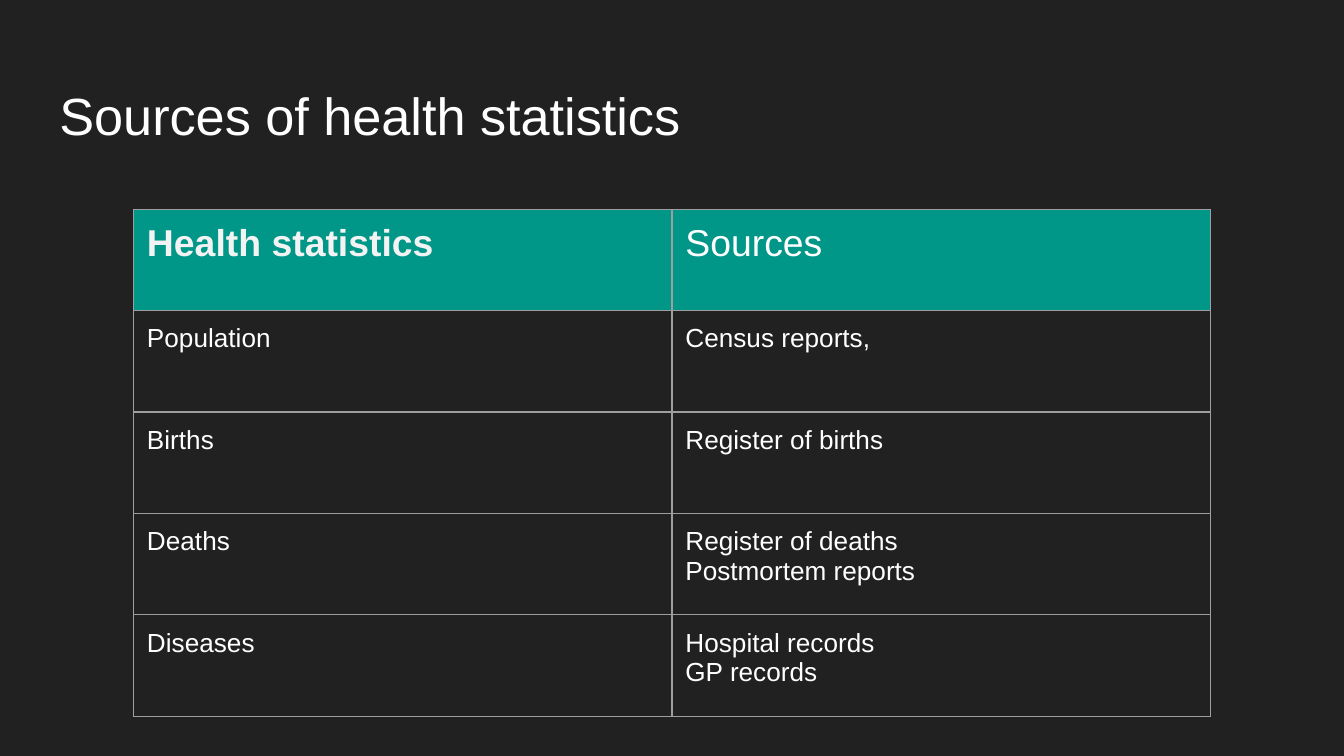
from collections import namedtuple

from lxml import etree
from pptx import Presentation
from pptx.dml.color import RGBColor
from pptx.enum import text
from pptx.oxml import ns

PX = 5715  # EMU per px: 160 px to the inch

Theme = namedtuple("Theme", "font back ink head_ink head line big mid small pad rule")
THEME = Theme("Arial", "212121", "FFFFFF", "F3F3F3", "009688", "9E9E9E",
              28, 20, 14, 16, 0.75)

TITLE = "Sources of health statistics"
ROWS = [
    ("Health statistics", "Sources"),
    ("Population", "Census reports,"),
    ("Births", "Register of births"),
    ("Deaths", "Register of deaths\nPostmortem reports"),
    ("Diseases", "Hospital records\nGP records"),
]


def scale(*box):
    return [n * PX for n in box]


def style(frame, size, ink, bold=False):
    for para in frame.paragraphs:
        for run in para.runs:
            font = run.font
            font.name, font.size, font.bold = THEME.font, size * 12700, bold
            font.color.rgb = RGBColor.from_string(ink)


def pad(part, top=THEME.pad):
    part.margin_left = part.margin_right = part.margin_bottom = THEME.pad * PX
    part.margin_top = top * PX


def edge(cell):
    """Draw the four borders, which must come before the fill."""
    props = cell._tc.get_or_add_tcPr()
    for spot, side in enumerate(("lnL", "lnR", "lnT", "lnB")):
        line = etree.Element(ns.qn(f"a:{side}"), w=str(int(THEME.rule * 12700)))
        fill = etree.SubElement(line, ns.qn("a:solidFill"))
        etree.SubElement(fill, ns.qn("a:srgbClr"), val=THEME.line)
        props.insert(spot, line)


def title(slide, x, y, w, h):
    box = slide.shapes.add_textbox(*scale(x, y, w, h))
    frame = box.text_frame
    frame.word_wrap = True
    frame.vertical_anchor = text.MSO_ANCHOR.TOP
    pad(frame, top=21)
    frame.text = TITLE
    style(frame, THEME.big, THEME.ink)


def table(slide, x, y, w, h):
    grid = slide.shapes.add_table(len(ROWS), len(ROWS[0]), *scale(x, y, w, h)).table
    grid.horz_banding = False
    for r, row in enumerate(ROWS):
        for c, words in enumerate(row):
            cell = grid.cell(r, c)
            pad(cell)
            cell.text_frame.text = words
            # Header row is filled; its first cell is bold
            if r == 0:
                cell.fill.solid()
                cell.fill.fore_color.rgb = RGBColor.from_string(THEME.head)
            else:
                cell.fill.background()
            lead = r == 0 and c == 0
            style(cell.text_frame, THEME.small if r else THEME.mid,
                  THEME.head_ink if lead else THEME.ink, lead)
            edge(cell)


def main():
    deck = Presentation()
    deck.slide_width, deck.slide_height = scale(1600, 900)
    slide = deck.slides.add_slide(deck.slide_layouts[6])

    # Background
    back = slide.background.fill
    back.solid()
    back.fore_color.rgb = RGBColor.from_string(THEME.back)

    title(slide, 55, 78, 1491, 101)
    table(slide, 159, 249, 1282, 604)
    deck.save("out.pptx")


if __name__ == "__main__":
    main()
